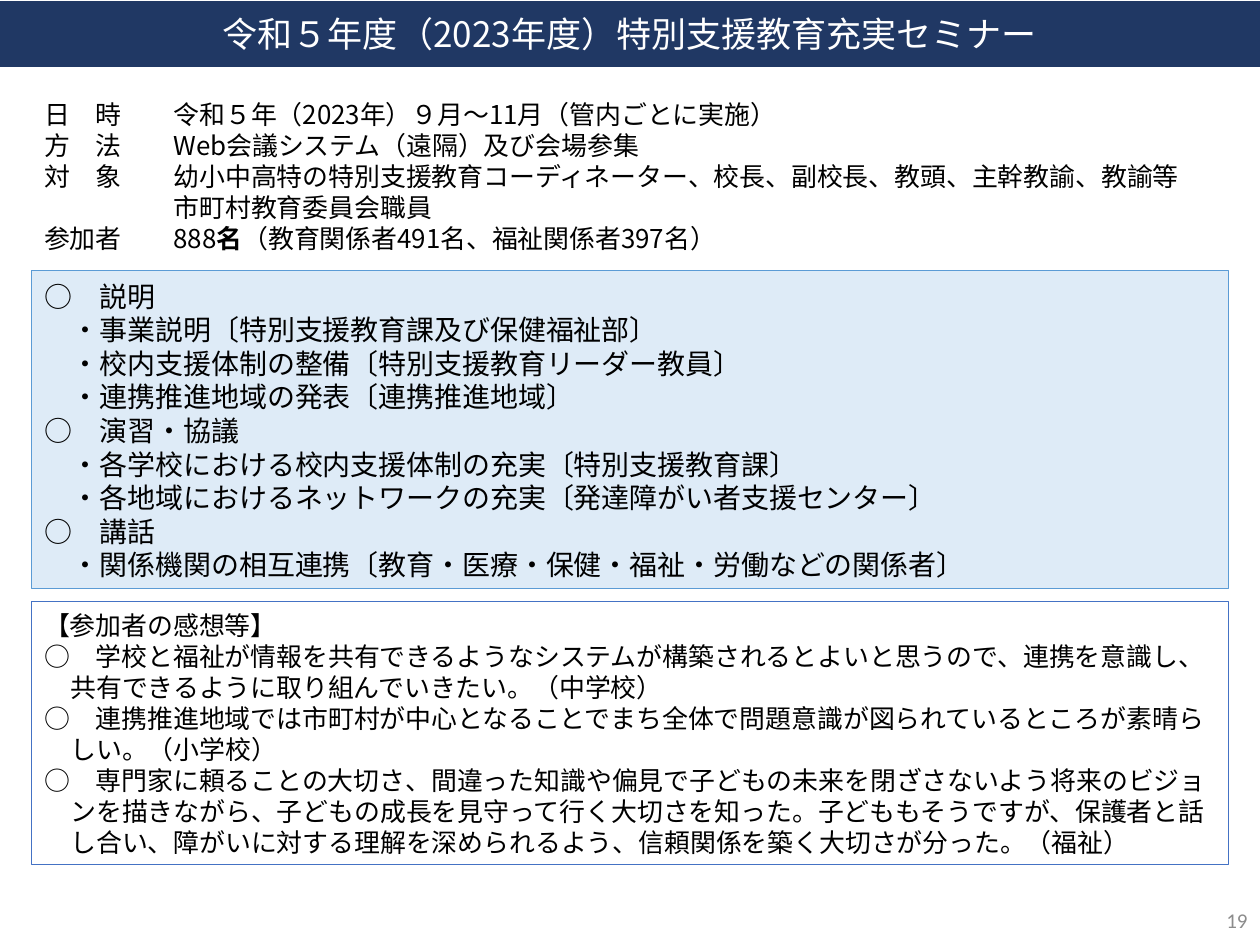
from dataclasses import dataclass
from typing import Any

from lxml.etree import SubElement
from pptx import Presentation
from pptx.dml.color import RGBColor
from pptx.enum.shapes import MSO_SHAPE
from pptx.enum.text import MSO_ANCHOR, PP_ALIGN
from pptx.oxml.ns import qn
from pptx.util import Cm, Pt

COLOURS = {
    "navy": "203864",
    "pale": "DEEBF7",
    "sky": "5B9BD5",
    "blue": "4472C4",
    "white": "FFFFFF",
    "black": "000000",
    "grey": "8C8C8C",
}
JAPANESE = "Noto Sans CJK JP"


def rgb(name):
    return RGBColor.from_string(COLOURS[name])


def write(paragraph, text, size=14.8, colour="black", font=JAPANESE, bold=False,
          align=PP_ALIGN.LEFT, spacing=None, margin=0, hanging=0):
    run = paragraph.add_run()
    run.text = text
    run.font.size = Pt(size)
    run.font.bold = bold
    run.font.name = font
    run.font.color.rgb = rgb(colour)
    SubElement(run.font._element, qn("a:ea"), typeface=font)
    paragraph.alignment = align
    if spacing:
        paragraph.line_spacing = Pt(spacing)
    properties = paragraph._p.get_or_add_pPr()
    properties.set("marL", str(Cm(margin)))
    properties.set("indent", str(-Cm(hanging)))


@dataclass
class SeminarSlide:
    """Holds the style and the current slide."""

    slide: Any
    inset: float = 0.17

    def frame(self, shape, anchor):
        frame = shape.text_frame
        frame.word_wrap = True
        frame.vertical_anchor = anchor
        if anchor == MSO_ANCHOR.TOP:
            frame.margin_top = Cm(self.inset)
        return frame

    def text(self, left, top, width, height, anchor=MSO_ANCHOR.TOP):
        box = self.slide.shapes.add_textbox(Cm(left), Cm(top), Cm(width), Cm(height))
        return self.frame(box, anchor)

    def panel(self, left, top, width, height, line, fill=None, weight=0.75,
              anchor=MSO_ANCHOR.TOP):
        panel = self.slide.shapes.add_shape(
            MSO_SHAPE.RECTANGLE, Cm(left), Cm(top), Cm(width), Cm(height))
        panel.shadow.inherit = False
        if fill:
            panel.fill.solid()
            panel.fill.fore_color.rgb = rgb(fill)
        else:
            panel.fill.background()
        panel.line.color.rgb = rgb(line)
        panel.line.width = Pt(weight)
        return self.frame(panel, anchor)

    def paragraphs(self, frame, entries):
        for index, (runs, style) in enumerate(entries):
            paragraph = frame.add_paragraph() if index else frame.paragraphs[0]
            for text, bold in runs:
                write(paragraph, text, bold=bold, **style)


def plain(text, **style):
    return [(text, False)], style


PROGRAMME = {
    "説明": [
        "事業説明〔特別支援教育課及び保健福祉部〕",
        "校内支援体制の整備〔特別支援教育リーダー教員〕",
        "連携推進地域の発表〔連携推進地域〕",
    ],
    "演習・協議": [
        "各学校における校内支援体制の充実〔特別支援教育課〕",
        "各地域におけるネットワークの充実〔発達障がい者支援センター〕",
    ],
    "講話": ["関係機関の相互連携〔教育・医療・保健・福祉・労働などの関係者〕"],
}
COMMENTS = [
    "【参加者の感想等】",
    "○　学校と福祉が情報を共有できるようなシステムが構築されるとよいと思うので、"
    "連携を意識し、共有できるように取り組んでいきたい。（中学校）",
    "○　連携推進地域では市町村が中心となることでまち全体で問題意識が図られている"
    "ところが素晴らしい。（小学校）",
    "○　専門家に頼ることの大切さ、間違った知識や偏見で子どもの未来を閉ざさないよう"
    "将来のビジョンを描きながら、子どもの成長を見守って行く大切さを知った。"
    "子どももそうですが、保護者と話し合い、障がいに対する理解を深められるよう、"
    "信頼関係を築く大切さが分った。（福祉）",
]


def main():
    presentation = Presentation()
    presentation.slide_width, presentation.slide_height = Cm(25.4), Cm(19.05)
    seminar = SeminarSlide(presentation.slides.add_slide(presentation.slide_layouts[6]))

    page_number = seminar.text(19.69, 18.03, 5.71, 1.02, MSO_ANCHOR.MIDDLE)
    write(page_number.paragraphs[0], "19", size=12, colour="grey", font="Calibri",
          align=PP_ALIGN.RIGHT)

    title = seminar.panel(0, 0.03, 25.4, 1.3, "navy", "navy", 1, MSO_ANCHOR.MIDDLE)
    write(title.paragraphs[0], "令和５年度（2023年度）特別支援教育充実セミナー", size=20,
          colour="white", align=PP_ALIGN.CENTER)

    programme = seminar.panel(0.64, 5.46, 24.13, 6.4, "sky", "pale")
    lines = []
    for heading, topics in PROGRAMME.items():
        lines.append(plain(f"○　{heading}", size=16, spacing=19.2))
        lines += [plain(f"・{topic}", size=16, spacing=19.2, margin=0.56)
                  for topic in topics]
    seminar.paragraphs(programme, lines)

    outline = seminar.text(0.64, 1.83, 24.76, 3.4)
    column = {"spacing": 17.7, "margin": 2.61}
    labelled = {**column, "hanging": 2.61}
    seminar.paragraphs(outline, [
        plain("日　時\t令和５年（2023年）９月～11月（管内ごとに実施）", **labelled),
        plain("方　法\tWeb会議システム（遠隔）及び会場参集", **labelled),
        plain("対　象\t幼小中高特の特別支援教育コーディネーター、校長、副校長、教頭、"
              "主幹教諭、教諭等", **labelled),
        plain("市町村教育委員会職員", **column),
        ([("参加者\t888", False), ("名", True),
          ("（教育関係者491名、福祉関係者397名）", False)], labelled),
    ])

    comments = seminar.panel(0.64, 12.12, 24.13, 5.31, "blue")
    seminar.paragraphs(comments, [
        plain(comment, spacing=17.7, margin=0.53, hanging=0.53) for comment in COMMENTS])

    presentation.save("out.pptx")


if __name__ == "__main__":
    main()
